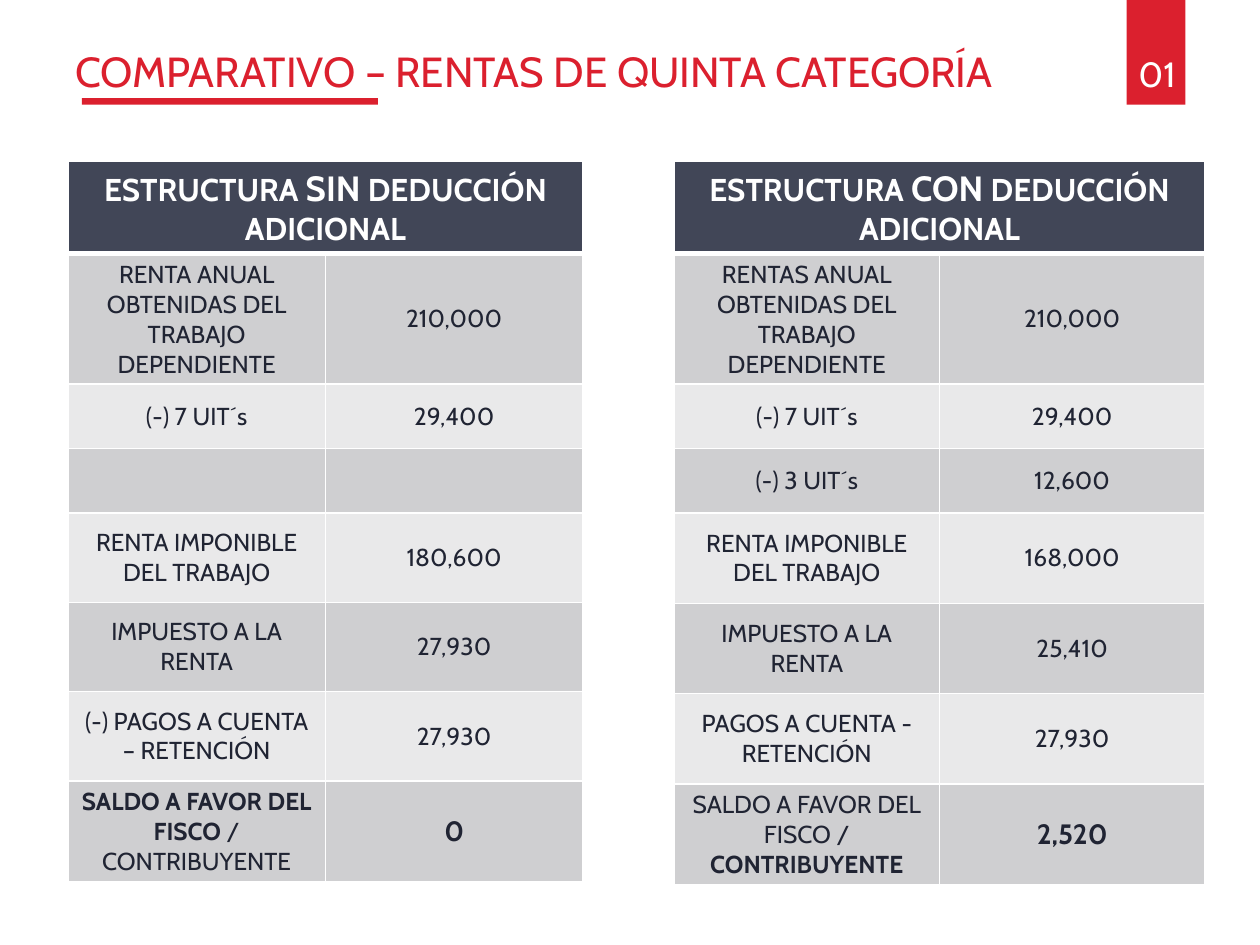
"""Build the slide comparing fifth-category income with and without the deduction."""
from lxml.etree import SubElement
from pptx import Presentation
from pptx.dml.color import RGBColor as RGB
from pptx.enum.shapes import MSO_SHAPE as SHAPE
from pptx.enum.text import MSO_ANCHOR as ANCHOR, PP_ALIGN as ALIGN
from pptx.oxml.ns import qn
from pptx.util import Cm, Pt

COLORS = {"red": "DB202E", "navy": "414657", "ink": "202433",
          "gray": "CFCFD1", "light": "E9E9EA", "white": "FFFFFF"}


def write(p, parts, color, align=ALIGN.CENTER):
    p.alignment = align
    for text, size, bold in parts:
        r = p.add_run()
        r.text = text
        r.font.name = "Cabin"
        r.font.size = Pt(size)
        r.font.bold = bold
        r.font.color.rgb = RGB.from_string(COLORS[color])


def style_cell(cell, fill, widths):
    cell.fill.solid()
    cell.fill.fore_color.rgb = RGB.from_string(COLORS[fill])
    tcPr = cell._tc.get_or_add_tcPr()
    for i, (side, width) in enumerate(zip("LRTB", widths)):
        ln = SubElement(tcPr, qn(f"a:ln{side}"), w=str(Pt(width)))
        SubElement(SubElement(ln, qn("a:solidFill")), qn("a:srgbClr"), val=COLORS["white"])
        tcPr.insert(i, ln)


prs = Presentation()
prs.slide_width, prs.slide_height = Cm(25.4), Cm(19.05)
s = prs.slides.add_slide(prs.slide_layouts[6])

badge = s.shapes.add_group_shape()
for shapes, box in ((s.shapes, (1.65, 1.98, 5.97, 0.13)),
                    (badge.shapes, (22.71, 0, 1.19, 2.11))):
    sp = shapes.add_shape(SHAPE.RECTANGLE, *map(Cm, box))
    sp.shadow.inherit = False
    sp.fill.solid()
    sp.fill.fore_color.rgb = RGB.from_string(COLORS["red"])
    sp.line.fill.background()

tf = badge.shapes.add_textbox(Cm(22.73), Cm(0.94), Cm(1.19), Cm(1.17)).text_frame
tf.word_wrap = True
tf.margin_left = tf.margin_right = 0
write(tf.paragraphs[0], [("01", 20, False)], "white")

tf = s.shapes.add_textbox(Cm(1.27), Cm(0.76), Cm(22.86), Cm(1.35)).text_frame
tf.word_wrap = True
tf.vertical_anchor = ANCHOR.MIDDLE
write(tf.paragraphs[0], [("COMPARATIVO – RENTAS DE QUINTA CATEGORÍA", 24, False)],
      "red", ALIGN.LEFT)

TABLES = [
    (1.37, 5.19, 1.8, "SIN", [
        ("RENTA ANUAL OBTENIDAS DEL TRABAJO DEPENDIENTE", "210,000"),
        ("(-) 7 UIT´s", "29,400"),
        ("", ""),
        ("RENTA IMPONIBLE DEL TRABAJO", "180,600"),
        ("IMPUESTO A LA RENTA", "27,930"),
        ("(-) PAGOS A CUENTA – RETENCIÓN", "27,930")],
     [("SALDO A FAVOR DEL FISCO ", 14, True), ("/ CONTRIBUYENTE", 14, False)], "0"),
    (13.59, 5.35, 1.82, "CON", [
        ("RENTAS ANUAL OBTENIDAS DEL TRABAJO DEPENDIENTE", "210,000"),
        ("(-) 7 UIT´s", "29,400"),
        ("(-) 3 UIT´s", "12,600"),
        ("RENTA IMPONIBLE DEL TRABAJO", "168,000"),
        ("IMPUESTO A LA RENTA", "25,410"),
        ("PAGOS A CUENTA - RETENCIÓN", "27,930")],
     [("SALDO A FAVOR DEL FISCO / ", 14, False), ("CONTRIBUYENTE", 14, True)], "2,520"),
]

for left, col_width, tall, kind, items, balance, total in TABLES:
    heights = [1.28, 2.57, 1.3, 1.3] + [tall] * 4
    table = s.shapes.add_table(len(heights), 2, Cm(left), Cm(3.25),
                               Cm(2 * col_width), Cm(sum(heights))).table
    for col in table.columns:
        col.width = Cm(col_width)
    for row, height in zip(table.rows, heights):
        row.height = Cm(height)

    header = table.cell(0, 0)
    header.merge(table.cell(0, 1))
    write(header.text_frame.paragraphs[0],
          [("ESTRUCTURA ", 18, True), (kind, 20, True), (" DEDUCCIÓN ADICIONAL", 18, True)],
          "white")
    for cell in table.rows[0].cells:
        style_cell(cell, "navy", (1, 1, 1, 3))

    body = [[[(text, 14, False)] if text else [] for text in item] for item in items]
    body.append([balance, [(total, 16, True)]])
    for i, row in enumerate(body, 1):
        for cell, parts in zip(table.rows[i].cells, row):
            cell.vertical_anchor = ANCHOR.MIDDLE
            write(cell.text_frame.paragraphs[0], parts, "ink")
            style_cell(cell, "gray" if i % 2 else "light", (1, 1, 3 if i == 1 else 1, 1))

prs.save("out.pptx")
